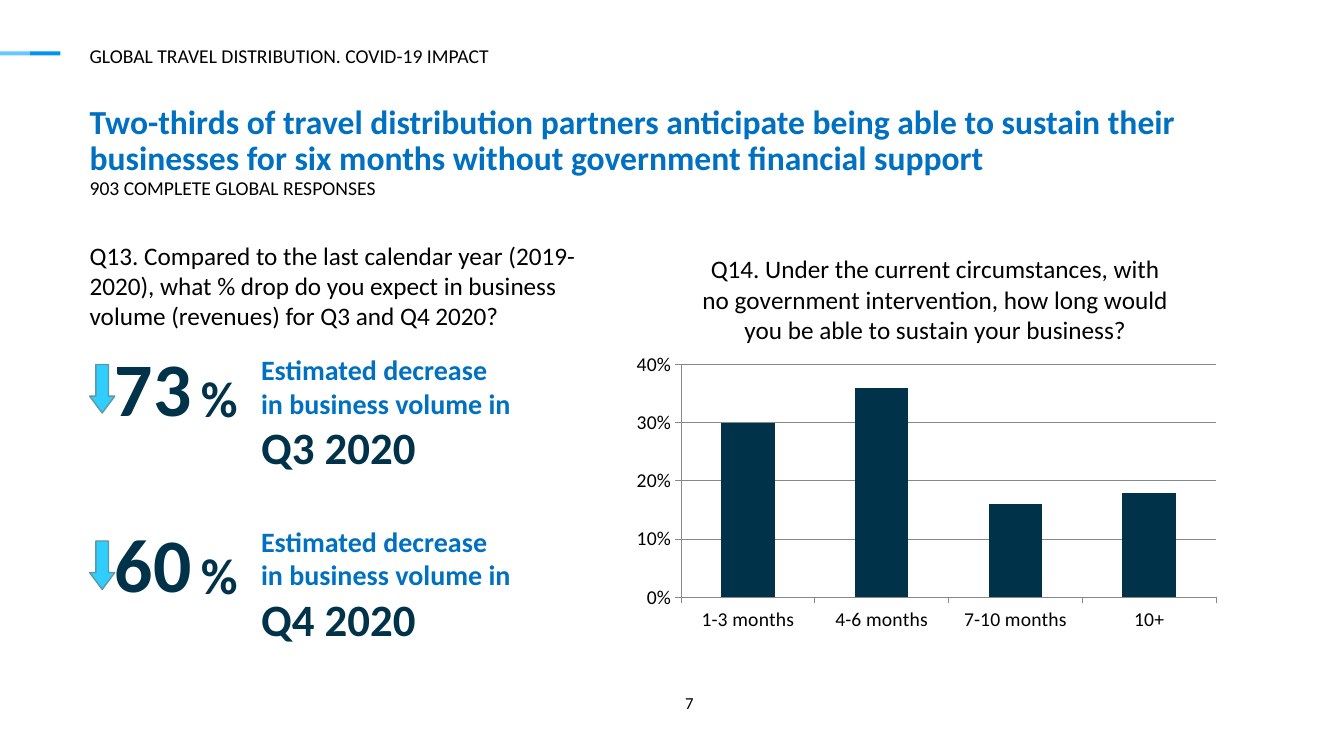
"""Builds the slide on how long travel distribution partners can sustain business."""
from dataclasses import dataclass

from lxml import etree
from pptx import Presentation
from pptx.chart.data import CategoryChartData
from pptx.dml.color import RGBColor
from pptx.enum import chart as kinds, shapes, text
from pptx.util import Pt


@dataclass(frozen=True)
class Theme:
    """Colours, type sizes and font of the slide."""
    font: str = "Calibri"
    black: str = "000000"
    blue: str = "0070C0"
    navy: str = "003249"
    arrow: str = "30CDFF"
    edge: str = "5F98A0"
    grid: str = "888888"
    bands: tuple = ("64C8FF", "0096F0")
    tiny: int = 12
    small: int = 14
    body: int = 18
    label: int = 20
    head: int = 24
    term: int = 32
    sign: int = 36
    big: int = 54


T = Theme()
LEFT = 64
TITLE = ("Two-thirds of travel distribution partners anticipate being able to sustain "
         "their businesses for six months without government financial support")
NOTES = [
    ("GLOBAL TRAVEL DISTRIBUTION. COVID-19 IMPACT", T.small, (LEFT, 31.7, 828, 16.6)),
    ("903 COMPLETE GLOBAL RESPONSES", T.small, (LEFT, 126, 828, 16.6)),
    ("Q13. Compared to the last calendar year (2019-2020), what % drop do you expect "
     "in business volume (revenues) for Q3 and Q4 2020?", T.body, (LEFT, 171.4, 375, 62.6)),
]
DROPS = [("73", "Q3 2020", 243.4, 252), ("60", "Q4 2020", 369.4, 374.4)]
LABEL = ["Estimated decrease", "in business volume in"]
ASK = ("Q14. Under the current circumstances, with no government intervention, "
       "how long would you be able to sustain your business?")
SPANS = {"1-3 months": 0.30, "4-6 months": 0.36, "7-10 months": 0.16, "10+": 0.18}
PLOT = (0.082, 0.331, 0.892, 0.576)
PAGE = "7"


def rgb(code):
    """Turn a hex code into a colour."""
    return RGBColor.from_string(code)


def style(font, size, color=T.black, bold=False):
    """Set the face, size, colour and weight of a font."""
    font.name, font.size, font.bold = T.font, Pt(size), bold
    font.color.rgb = rgb(color)


def fill(frame, lines, align=text.PP_ALIGN.LEFT):
    """Write one styled run per paragraph into a frame without margins."""
    frame.word_wrap = True
    frame.auto_size = text.MSO_AUTO_SIZE.NONE
    frame.vertical_anchor = text.MSO_ANCHOR.TOP
    frame.margin_left = frame.margin_right = frame.margin_top = frame.margin_bottom = 0
    for i, (words, *look) in enumerate(lines):
        par = frame.add_paragraph() if i else frame.paragraphs[0]
        par.alignment = align
        run = par.add_run()
        run.text = words
        style(run.font, *look)


def write(slide, box, lines, align=text.PP_ALIGN.LEFT):
    """Add a text box."""
    fill(slide.shapes.add_textbox(*map(Pt, box)).text_frame, lines, align)


def draw(slide, kind, box, color):
    """Add a flat filled shape without outline."""
    item = slide.shapes.add_shape(kind, *map(Pt, box))
    item.shadow.inherit = False
    item.fill.solid()
    item.fill.fore_color.rgb = rgb(color)
    item.line.fill.background()
    return item


def place(part, spots):
    """Give a chart part a manual layout."""
    layout = part.get_or_add_layout() if hasattr(part, "get_or_add_layout") else part.find("{*}layout")
    if layout is None:
        layout = etree.Element(part.tag.split("}")[0] + "}layout")
        part.insert(0, layout)
    base = layout.tag.split("}")[0] + "}"
    for old in list(layout):
        layout.remove(old)
    manual = etree.SubElement(layout, base + "manualLayout")
    for name, val in spots:
        etree.SubElement(manual, base + name).set("val", str(val))


def add_drop(slide, num, term, top, side):
    """Add an arrow, a percentage and its label."""
    arrow = draw(slide, shapes.MSO_SHAPE.DOWN_ARROW, (LEFT, top + 17, 18, 34.6), T.arrow)
    arrow.adjustments[0], arrow.adjustments[1] = 0.5, 0.67
    arrow.line.color.rgb = rgb(T.edge)
    arrow.line.width = Pt(1)
    write(slide, (82, top, 64, 66), [(num, T.big, T.navy, True)])
    write(slide, (143.5, top + 19, 40, 51), [("%", T.sign, T.navy, True)])
    lines = [(words, T.label, T.blue, True) for words in LABEL]
    write(slide, (186.5, side, 237, 90), lines + [(term, T.term, T.navy, True)])


def add_bars(slide):
    """Add the column chart with its question as title."""
    data = CategoryChartData(number_format="0%")
    data.categories = list(SPANS)
    data.add_series("Series 1", list(SPANS.values()))
    box = map(Pt, (451.4, 164.9, 428.4, 288.7))
    chart = slide.shapes.add_chart(kinds.XL_CHART_TYPE.COLUMN_CLUSTERED, *box, data).chart
    style(chart.font, T.small)
    chart.has_legend = False
    chart.has_title = True
    par = chart.chart_title.text_frame.paragraphs[0]
    run = par.add_run()
    run.text = ASK
    style(run.font, T.body)
    chart.chart_title.include_in_layout = False
    modes = [("xMode", "edge"), ("yMode", "edge")]
    title = chart.chart_title._element
    place(title, modes + [("x", 0.11), ("y", 0.04)])
    title.insert(1, title.find("{*}layout"))
    area = chart._chartSpace.chart.plotArea
    place(area, [("layoutTarget", "inner")] + modes + list(zip("xywh", PLOT)))
    plot = chart.plots[0]
    plot.gap_width, plot.vary_by_categories = 150, False
    bars = plot.series[0].format.fill
    bars.solid()
    bars.fore_color.rgb = rgb(T.navy)
    vals = chart.value_axis
    vals.minimum_scale, vals.maximum_scale, vals.major_unit = 0, 0.4, 0.1
    vals.tick_labels.number_format = "0%"
    vals.tick_labels.number_format_is_linked = False
    vals.has_major_gridlines = True
    for axis in (chart.category_axis, vals):
        axis.major_tick_mark = kinds.XL_TICK_MARK.OUTSIDE
        style(axis.tick_labels.font, T.small)
    for part in (chart.category_axis, vals, vals.major_gridlines):
        part.format.line.color.rgb = rgb(T.grid)
        part.format.line.width = Pt(0.75)


def main():
    """Build and save the slide."""
    deck = Presentation()
    deck.slide_width, deck.slide_height = Pt(960), Pt(540)
    slide = deck.slides.add_slide(deck.slide_layouts[5])
    for i, color in enumerate(T.bands):
        draw(slide, shapes.MSO_SHAPE.RECTANGLE, (i * 21.6, 36.7, 21.6, 2.9), color)
    title = slide.shapes.title
    title.left, title.top, title.width, title.height = map(Pt, (LEFT, 75, 830, 41))
    fill(title.text_frame, [(TITLE, T.head, T.blue, True)])
    title.text_frame.paragraphs[0].line_spacing = 0.9
    for words, size, box in NOTES:
        write(slide, box, [(words, size)])
    for drop in DROPS:
        add_drop(slide, *drop)
    add_bars(slide)
    write(slide, (384.5, 494.6, 216, 25), [(PAGE, T.tiny)], text.PP_ALIGN.CENTER)
    deck.save("out.pptx")


if __name__ == "__main__":
    main()
